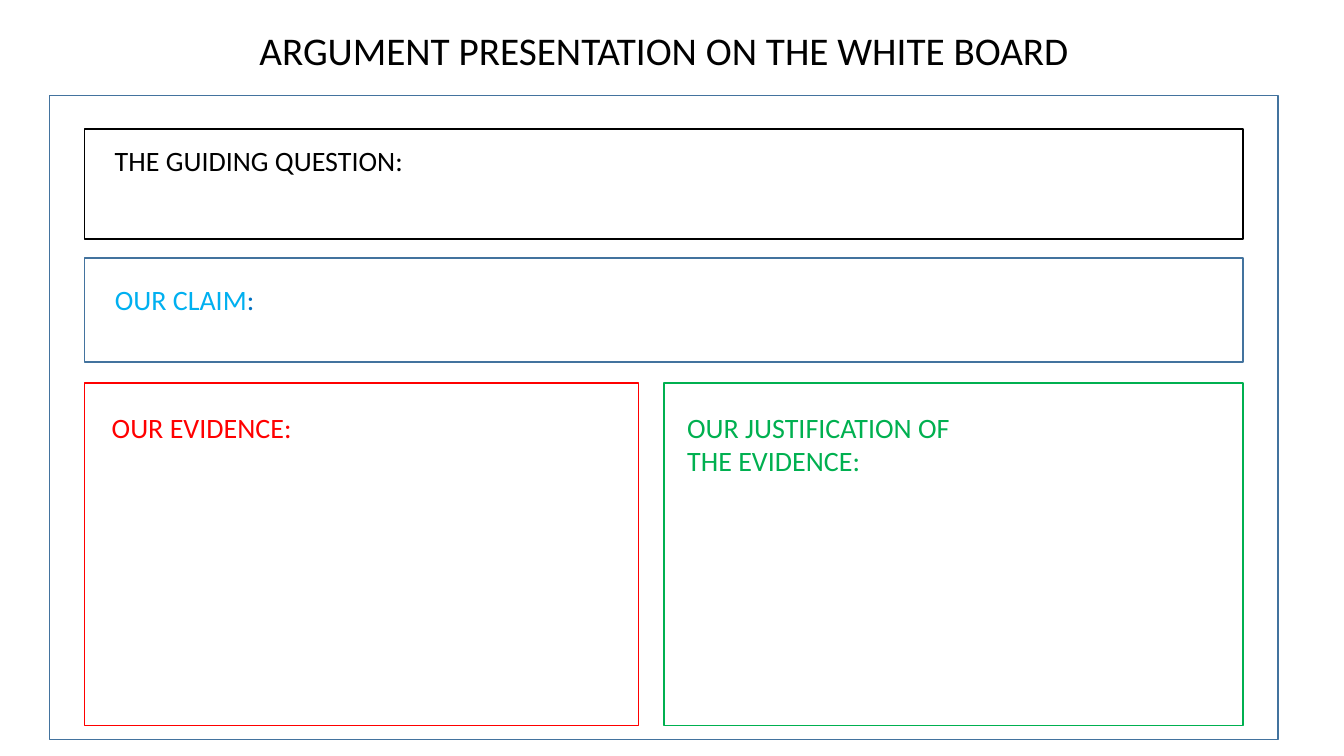
from pptx import Presentation
from pptx.dml.color import RGBColor
from pptx.enum.shapes import MSO_SHAPE as Shape
from pptx.enum.text import MSO_ANCHOR as Anchor, PP_ALIGN as Align
from pptx.util import Pt

BLACK = RGBColor(0x00, 0x00, 0x00)
STEEL = RGBColor(0x43, 0x73, 0x9E)
SKY = RGBColor(0x00, 0xB0, 0xF0)
BLUE = RGBColor(0x00, 0x70, 0xC0)
RED = RGBColor(0xFF, 0x00, 0x00)
GREEN = RGBColor(0x00, 0xB0, 0x50)

BOARD_LEFT, BOARD_WIDTH = 35.3, 877.7
LEFT, WIDTH = 60.5, 827.5
LOWER_TOP, LOWER_HEIGHT = 273.6, 244.8


def add_frame(left, top, width, height, color):
    frame = slide.shapes.add_shape(
        Shape.RECTANGLE, Pt(left), Pt(top), Pt(width), Pt(height))
    frame.shadow.inherit = False
    frame.fill.background()
    frame.line.color.rgb = color
    frame.line.width = Pt(1)


def add_run(paragraph, text, size, color):
    run = paragraph.add_run()
    run.text = text
    run.font.name = "Calibri"
    run.font.size = Pt(size)
    run.font.color.rgb = color


prs = Presentation()
prs.slide_width, prs.slide_height = Pt(960), Pt(540)
slide = prs.slides.add_slide(prs.slide_layouts[5])

title = slide.shapes.title
title.left, title.top = Pt(BOARD_LEFT), Pt(15.1)
title.width, title.height = Pt(BOARD_WIDTH), Pt(41.2)
title.text_frame.vertical_anchor = Anchor.TOP
heading = title.text_frame.paragraphs[0]
heading.alignment = Align.CENTER
add_run(heading, "ARGUMENT PRESENTATION ON THE WHITE BOARD", 28, BLACK)

add_frame(BOARD_LEFT, 68.4, BOARD_WIDTH, 460, STEEL)

# Each section: frame box, frame colour, label box, label lines of (text, colour) runs
sections = [
    ((LEFT, 92.2, WIDTH, 78.5), BLACK, (74.9, 98.6, 418, 32),
     [[("THE GUIDING QUESTION:", BLACK)]]),
    ((LEFT, 184.3, WIDTH, 74.2), STEEL, (74.9, 198, 181.4, 32),
     [[("OUR CLAIM", SKY), (":", BLUE)]]),
    ((LEFT, LOWER_TOP, 395.5, LOWER_HEIGHT), RED, (72.7, 289.4, 183.6, 32),
     [[("OUR EVIDENCE:", RED)]]),
    ((474.3, LOWER_TOP, 413.7, LOWER_HEIGHT), GREEN, (483.8, 289.4, 276.5, 55.7),
     [[("OUR JUSTIFICATION OF", GREEN)], [("THE EVIDENCE:", GREEN)]]),
]

for frame_box, frame_color, label_box, lines in sections:
    add_frame(*frame_box, frame_color)
    label = slide.shapes.add_textbox(*map(Pt, label_box)).text_frame
    label.word_wrap = True
    for number, line in enumerate(lines):
        paragraph = label.add_paragraph() if number else label.paragraphs[0]
        for text, color in line:
            add_run(paragraph, text, 20, color)

prs.save("out.pptx")
